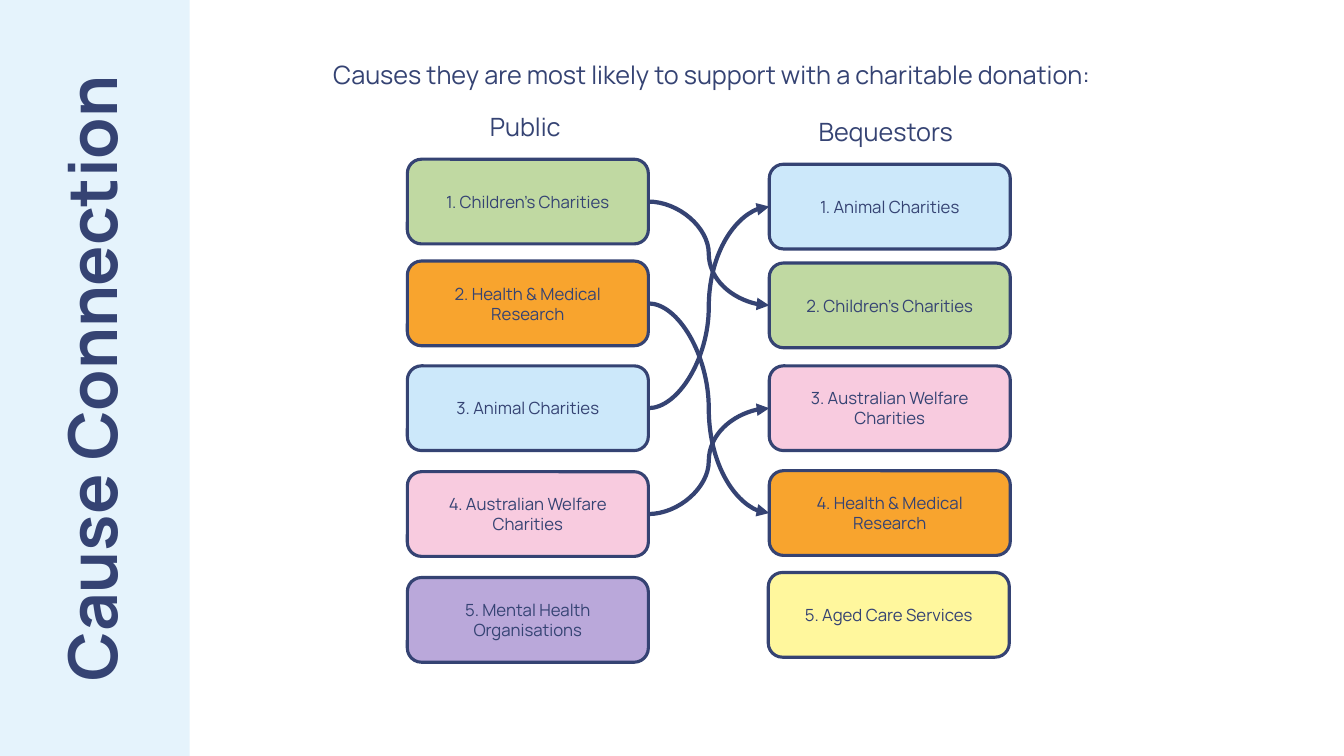
"""Build the Cause Connection slide: ranked causes of the public and bequestors."""
from lxml import etree
from pptx import Presentation
from pptx.dml.color import RGBColor
from pptx.enum import shapes, text
from pptx.oxml import ns
from pptx.util import Inches, Pt

COLORS = {
    "navy": "354373", "blue": "CCE8FA", "green": "C0D9A2", "orange": "F8A42E",
    "pink": "F8CBDF", "purple": "BAA8DA", "yellow": "FFF79D",
}
CAUSES = {
    "Children’s Charities": "green",
    "Health & Medical Research": "orange",
    "Animal Charities": "blue",
    "Australian Welfare Charities": "pink",
    "Mental Health Organisations": "purple",
    "Aged Care Services": "yellow",
}
PUBLIC = [
    ("Children’s Charities", 4.04, 1.58),
    ("Health & Medical Research", 4.04, 2.59),
    ("Animal Charities", 4.04, 3.63),
    ("Australian Welfare Charities", 4.04, 4.68),
    ("Mental Health Organisations", 4.04, 5.73),
]
BEQUESTORS = [
    ("Animal Charities", 7.63, 1.63),
    ("Children’s Charities", 7.63, 2.61),
    ("Australian Welfare Charities", 7.63, 3.63),
    ("Health & Medical Research", 7.63, 4.67),
    ("Aged Care Services", 7.62, 5.68),
]
LABELS = [
    ("Causes they are most likely to support with a charitable donation:",
     2.03, 0.54, 10.06, True),
    ("Public", 4.76, 1.06, 0.95, False),
    ("Bequestors", 8.02, 1.1, 1.61, False),
]


def rgb(name):
    return RGBColor.from_string(COLORS[name])


def write(s, words, size, bold=False, align=text.PP_ALIGN.CENTER):
    s.text_frame.text = words
    p = s.text_frame.paragraphs[0]
    p.alignment = align
    p.font.name = "Manrope"
    p.font.size = Pt(size)
    p.font.bold = bold
    p.font.color.rgb = rgb("navy")
    return p


prs = Presentation()
prs.slide_width, prs.slide_height = Inches(13.33), Inches(7.5)
slide = prs.slides.add_slide(prs.slide_layouts[5])

band = slide.shapes.add_shape(shapes.MSO_SHAPE.RECTANGLE, 0, 0, Inches(1.88), Inches(7.5))
band.shadow.inherit = False
band.fill.solid()
band.fill.fore_color.rgb = rgb("blue")
band.line.fill.background()
band_color = band.element.spPr.find(".//" + ns.qn("a:srgbClr"))
etree.SubElement(band_color, ns.qn("a:alpha"), val="50000")

title = slide.shapes.title
title.left, title.top = Inches(-2.52), Inches(3.03)
title.width, title.height = Inches(6.93), Inches(1.45)
title.rotation = 270
title.text_frame.vertical_anchor = text.MSO_ANCHOR.MIDDLE
write(title, "Cause Connection", 48, bold=True).line_spacing = 0.9
title.element.getparent().append(title.element)

for words, left, top, width, wrap in LABELS:
    s = slide.shapes.add_textbox(Inches(left), Inches(top), Inches(width), Inches(0.4))
    s.text_frame.word_wrap = wrap
    s.text_frame.auto_size = text.MSO_AUTO_SIZE.SHAPE_TO_FIT_TEXT
    write(s, words, 18, align=text.PP_ALIGN.CENTER if wrap else text.PP_ALIGN.LEFT)

columns = []
for ranking in (PUBLIC, BEQUESTORS):
    boxes = {}
    for rank, (cause, left, top) in enumerate(ranking, 1):
        s = slide.shapes.add_shape(shapes.MSO_SHAPE.ROUNDED_RECTANGLE,
                                   Inches(left), Inches(top), Inches(2.39), Inches(0.84))
        s.shadow.inherit = False
        s.fill.solid()
        s.fill.fore_color.rgb = rgb(CAUSES[cause])
        s.line.color.rgb = rgb("navy")
        s.line.width = Pt(2.25)
        s.text_frame.word_wrap = True
        s.text_frame.vertical_anchor = text.MSO_ANCHOR.MIDDLE
        write(s, f"{rank}. {cause}", 12)
        boxes[cause] = s
    columns.append(boxes)

public, bequestors = columns
RIGHT_SITE, LEFT_SITE = 3, 1
for cause in public:
    if cause in bequestors:
        arrow = slide.shapes.add_connector(shapes.MSO_CONNECTOR.CURVE, 0, 0, 0, 0)
        arrow.begin_connect(public[cause], RIGHT_SITE)
        arrow.end_connect(bequestors[cause], LEFT_SITE)
        arrow.line.color.rgb = rgb("navy")
        arrow.line.width = Pt(3)
        etree.SubElement(arrow.line._get_or_add_ln(), ns.qn("a:tailEnd"), type="triangle")
        etree.SubElement(arrow.element.spPr, ns.qn("a:effectLst"))

prs.save("out.pptx")
